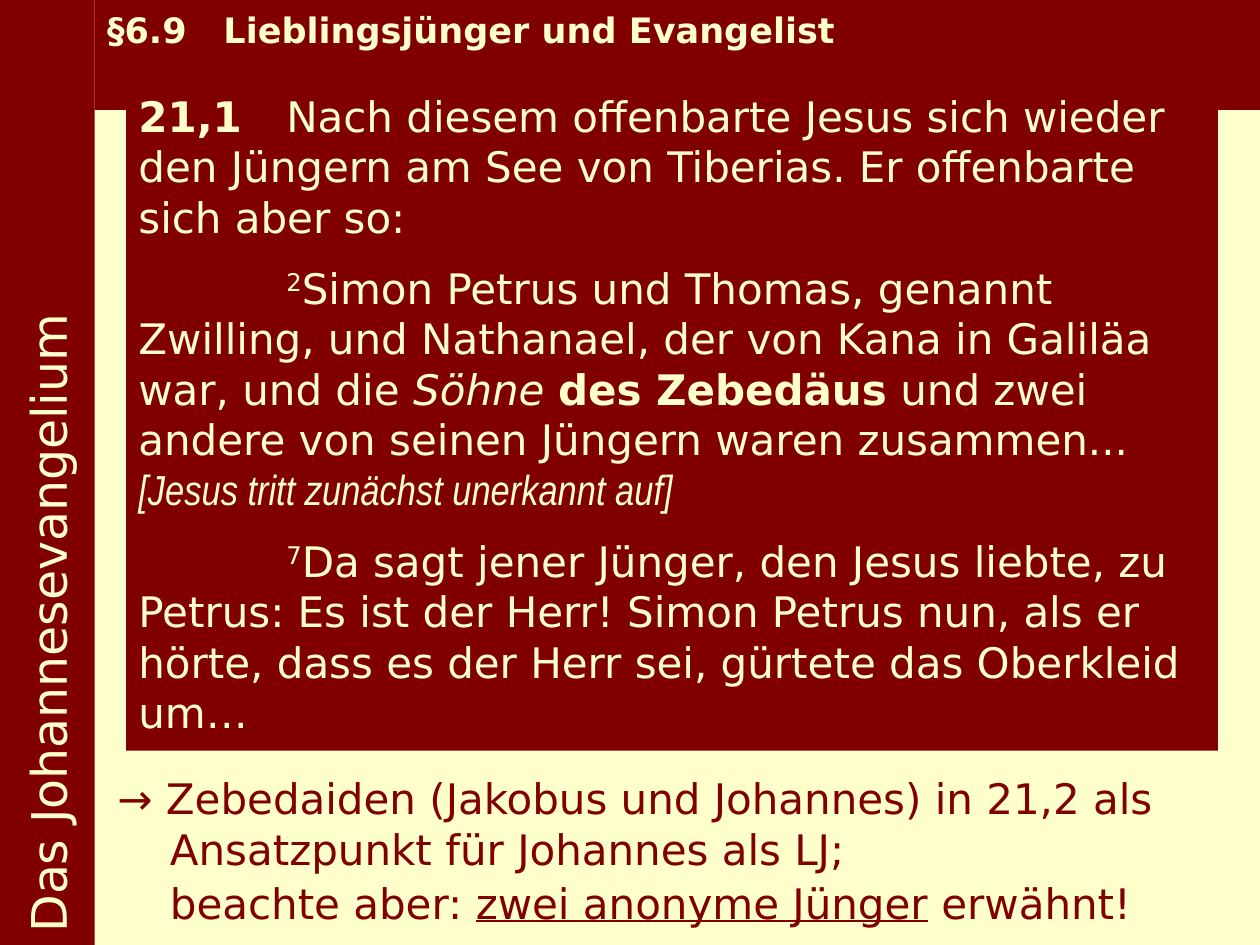
"""Build a slide on the beloved disciple in John 21."""
from lxml.etree import SubElement
from pptx import Presentation
from pptx.dml.color import RGBColor
from pptx.enum.shapes import MSO_SHAPE
from pptx.enum.text import MSO_ANCHOR, MSO_AUTO_SIZE, PP_ALIGN
from pptx.oxml.ns import qn
from pptx.util import Pt

MAROON = RGBColor(0x80, 0x00, 0x00)
CREAM = RGBColor(0xFF, 0xFF, 0xCC)
FONT = "DejaVu Sans"
NARROW_FONT = "Arial Narrow"

HEADING = [[("§6.9\tLieblingsjünger und Evangelist", "bold")]]
SIDEBAR = [[("Das Johannesevangelium", "")]]
VERSES = [
    [
        ("21,1\t", "bold"),
        ("Nach diesem offenbarte Jesus sich wieder den Jüngern am See von "
         "Tiberias. Er offenbarte sich aber so:", ""),
    ],
    [
        ("\t2", "superscript"),
        ("Simon Petrus und Thomas, genannt Zwilling, und Nathanael, der von "
         "Kana in Galiläa war, und die ", ""),
        ("Söhne ", "italic"),
        ("des Zebedäus", "bold"),
        (" und zwei andere von seinen Jüngern waren zusammen... ", ""),
        ("[Jesus tritt zunächst unerkannt auf]", "narrow italic"),
    ],
    [
        ("\t7", "superscript"),
        ("Da sagt jener Jünger, den Jesus liebte, zu Petrus: Es ist der Herr! "
         "Simon Petrus nun, als er hörte, dass es der Herr sei, gürtete das "
         "Oberkleid um…", ""),
    ],
]
CONCLUSION = [
    [("→ Zebedaiden (Jakobus und Johannes) in 21,2 als Ansatzpunkt für "
      "Johannes als LJ;", "")],
    [("\tbeachte aber: ", ""), ("zwei anonyme Jünger", "underline"),
     (" erwähnt!", "")],
]

SLIDE_WIDTH, SLIDE_HEIGHT = 720, 540
SIDEBAR_WIDTH = 54
HEADING_HEIGHT = 34


def write(shape, paragraphs, size, color, gap=0, tabs=(), hanging=0,
          alignment=PP_ALIGN.LEFT):
    text_frame = shape.text_frame
    text_frame.word_wrap = True
    text_frame.auto_size = MSO_AUTO_SIZE.SHAPE_TO_FIT_TEXT
    text_frame.vertical_anchor = MSO_ANCHOR.TOP
    for index, pieces in enumerate(paragraphs):
        paragraph = text_frame.add_paragraph() if index else text_frame.paragraphs[0]
        paragraph.alignment = alignment
        paragraph.line_spacing = 1.0
        paragraph.space_before = Pt(gap if index else 0)
        properties = paragraph._p.get_or_add_pPr()
        if hanging:
            properties.set("marL", str(Pt(hanging)))
            properties.set("indent", str(-Pt(hanging)))
        if tabs:
            tab_list = SubElement(properties, qn("a:tabLst"))
            for position in tabs:
                SubElement(tab_list, qn("a:tab"), pos=str(Pt(position)), algn="l")
        for text, style in pieces:
            run = paragraph.add_run()
            run.text = text
            font = run.font
            font.name = NARROW_FONT if "narrow" in style else FONT
            font.size = Pt(size)
            font.color.rgb = color
            font.bold = "bold" in style
            font.italic = "italic" in style
            font.underline = "underline" in style
            if style == "superscript":
                run._r.get_or_add_rPr().set("baseline", "30000")


def add_panel(slide, left, top, width, height):
    panel = slide.shapes.add_shape(
        MSO_SHAPE.RECTANGLE, Pt(left), Pt(top), Pt(width), Pt(height))
    panel.shadow.inherit = False
    panel.fill.solid()
    panel.fill.fore_color.rgb = MAROON
    panel.line.fill.background()
    return panel


def main():
    presentation = Presentation()
    presentation.slide_width = Pt(SLIDE_WIDTH)
    presentation.slide_height = Pt(SLIDE_HEIGHT)
    slide = presentation.slides.add_slide(presentation.slide_layouts[5])
    slide.background.fill.solid()
    slide.background.fill.fore_color.rgb = CREAM

    heading = slide.shapes.title
    heading.left, heading.top = Pt(SIDEBAR_WIDTH), Pt(0)
    heading.width, heading.height = Pt(SLIDE_WIDTH - SIDEBAR_WIDTH), Pt(HEADING_HEIGHT)
    heading.fill.solid()
    heading.fill.fore_color.rgb = MAROON
    heading.text_frame.margin_top = heading.text_frame.margin_bottom = Pt(5)
    write(heading, HEADING, 20, CREAM, tabs=[66.5])

    verses = add_panel(slide, 72, 48, 624, 381)
    write(verses, VERSES, 24, CREAM, gap=12, tabs=[84.5, 144])

    conclusion = slide.shapes.add_textbox(Pt(60), Pt(438), Pt(660), Pt(96.5))
    write(conclusion, CONCLUSION, 24, MAROON, gap=2.4, hanging=30)

    sidebar = add_panel(slide, 0, 0, SIDEBAR_WIDTH, SLIDE_HEIGHT)
    sidebar.rotation = 180
    write(sidebar, SIDEBAR, 28, CREAM, alignment=PP_ALIGN.CENTER)
    sidebar.text_frame.word_wrap = False
    sidebar.text_frame.auto_size = MSO_AUTO_SIZE.NONE
    sidebar.text_frame.vertical_anchor = MSO_ANCHOR.MIDDLE
    sidebar.text_frame._txBody.bodyPr.set("vert", "eaVert")

    presentation.save("out.pptx")


if __name__ == "__main__":
    main()
